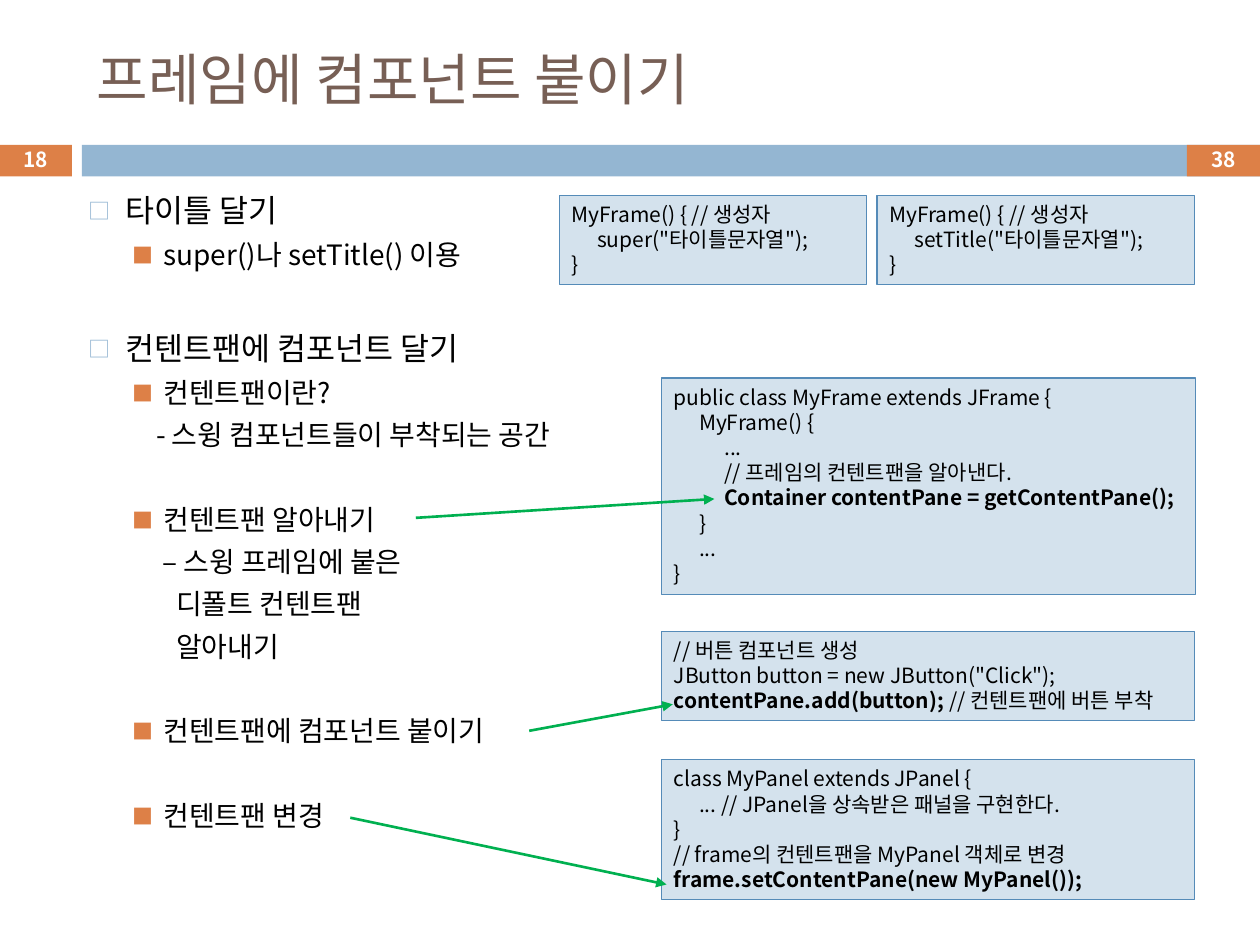
from lxml.etree import SubElement
from pptx import Presentation
from pptx.dml.color import RGBColor
from pptx.enum.shapes import MSO_CONNECTOR, MSO_SHAPE
from pptx.enum.text import MSO_ANCHOR, PP_ALIGN
from pptx.oxml.ns import qn
from pptx.util import Inches, Pt

ORANGE, BLUE, BROWN = "DD8047", "94B6D2", "775F55"
CODE_FILL, CODE_LINE, GREEN = "D4E2ED", "558BB8", "00B050"
BLACK, WHITE = "000000", "FFFFFF"


def color(value):
    return RGBColor.from_string(value)


class SlideBuilder:
    """Hold the style and the current slide, and draw each kind of element."""

    font = "Noto Sans CJK KR"
    code_size = 12
    code_indent = 0.2

    def __init__(self, slide):
        self.slide = slide

    def run(self, paragraph, text, size, ink=BLACK, bold=False):
        run = paragraph.add_run()
        run.text = text
        run.font.size = Pt(size)
        run.font.bold = bold
        run.font.color.rgb = color(ink)
        run.font.name = self.font
        SubElement(run.font._element, qn("a:ea"), typeface=self.font)

    def indent(self, paragraph, left, first=0):
        properties = paragraph._p.get_or_add_pPr()
        properties.set("marL", str(Inches(left)))
        properties.set("indent", str(Inches(first)))
        return properties

    def bullet(self, paragraph, symbol, ink, percent, left, first):
        properties = self.indent(paragraph, left, first)
        bullet_color = SubElement(properties, qn("a:buClr"))
        SubElement(bullet_color, qn("a:srgbClr"), val=ink)
        SubElement(properties, qn("a:buSzPct"), val=str(percent * 1000))
        SubElement(properties, qn("a:buFont"), typeface=self.font)
        SubElement(properties, qn("a:buChar"), char=symbol)

    def rectangle(self, box, fill, line=None):
        shape = self.slide.shapes.add_shape(
            MSO_SHAPE.RECTANGLE, *(Inches(length) for length in box))
        shape.shadow.inherit = False
        shape.fill.solid()
        shape.fill.fore_color.rgb = color(fill)
        if line:
            shape.line.color.rgb = color(line)
            shape.line.width = Pt(0.75)
        else:
            shape.line.fill.background()
        return shape

    def text_frame(self, box, anchor=MSO_ANCHOR.TOP):
        frame = self.slide.shapes.add_textbox(
            *(Inches(length) for length in box)).text_frame
        frame.word_wrap = True
        frame.vertical_anchor = anchor
        return frame

    def label(self, box, text, size, ink, bold=False, align=PP_ALIGN.LEFT):
        paragraph = self.text_frame(box, MSO_ANCHOR.MIDDLE).paragraphs[0]
        paragraph.alignment = align
        self.run(paragraph, text, size, ink, bold)

    def outline(self, box, items):
        frame = self.text_frame(box)
        for number, (kind, text, before) in enumerate(items):
            paragraph = frame.paragraphs[0] if number == 0 else frame.add_paragraph()
            paragraph.space_before = Pt(before)
            if kind == "topic":
                self.bullet(paragraph, "□", BLUE, 70, 0.7, -0.3)
            elif kind == "point":
                self.bullet(paragraph, "■", ORANGE, 75, 1, -0.25)
            else:
                self.indent(paragraph, kind)
            self.run(paragraph, text, 18 if kind == "topic" else 16)

    def code(self, box, lines):
        shape = self.rectangle(box, CODE_FILL, CODE_LINE)
        frame = shape.text_frame
        frame.word_wrap = True
        frame.vertical_anchor = MSO_ANCHOR.TOP
        for number, (depth, *parts) in enumerate(lines):
            paragraph = frame.paragraphs[0] if number == 0 else frame.add_paragraph()
            paragraph.alignment = PP_ALIGN.LEFT
            self.indent(paragraph, depth * self.code_indent)
            for part in parts:
                text, bold = part if isinstance(part, tuple) else (part, False)
                self.run(paragraph, text, self.code_size, bold=bold)

    def arrow(self, *ends):
        connector = self.slide.shapes.add_connector(
            MSO_CONNECTOR.STRAIGHT, *(Inches(length) for length in ends))
        connector.line.color.rgb = color(GREEN)
        connector.line.width = Pt(1.5)
        SubElement(connector.line._get_or_add_ln(), qn("a:tailEnd"), type="triangle")
        SubElement(connector._element.spPr, qn("a:effectLst"))


def main():
    presentation = Presentation()
    presentation.slide_width, presentation.slide_height = Inches(10), Inches(7.5)
    builder = SlideBuilder(presentation.slides.add_slide(presentation.slide_layouts[6]))

    builder.rectangle((0.65, 1.15, 9.35, 0.25), BLUE)
    for left, page in ((-0.01, "18"), (9.42, "38")):
        builder.rectangle((left, 1.15, 0.58, 0.25), ORANGE)
        builder.label((left, 1.13, 0.58, 0.27), page, 11.9, WHITE, True, PP_ALIGN.CENTER)
    builder.label((0.67, 0.25, 8.92, 0.74), "프레임에 컴포넌트 붙이기", 32, BROWN)

    builder.outline((0.2, 1.47, 8.92, 5.51), [
        ("topic", "타이틀 달기", 5.5),
        ("point", "super()나 setTitle() 이용", 5),
        ("topic", "컨텐트팬에 컴포넌트 달기", 32.6),
        ("point", "컨텐트팬이란?", 5),
        (0.94, "- 스윙 컴포넌트들이 부착되는 공간", 5),
        ("point", "컨텐트팬 알아내기", 29.2),
        (0.99, "– 스윙 프레임에 붙은", 5),
        (1.1, "디폴트 컨텐트팬", 5),
        (1.1, "알아내기", 5),
        ("point", "컨텐트팬에 컴포넌트 붙이기", 29.2),
        ("point", "컨텐트팬 변경", 29.2),
    ])

    builder.code((5.25, 3, 4.24, 1.72), [
        (0, "public class MyFrame extends JFrame {"),
        (1, "MyFrame() {"),
        (2, "..."),
        (2, "// 프레임의 컨텐트팬을 알아낸다."),
        (2, ("Container contentPane = getContentPane();", True)),
        (1, "}"),
        (1, "..."),
        (0, "}"),
    ])
    builder.code((5.25, 6.03, 4.23, 1.11), [
        (0, "class MyPanel extends JPanel {"),
        (1, "... // JPanel을 상속받은 패널을 구현한다."),
        (0, "}"),
        (0, "// frame의 컨텐트팬을 MyPanel 객체로 변경"),
        (0, ("frame.setContentPane(new MyPanel());", True)),
    ])
    builder.code((5.25, 5.01, 4.23, 0.71), [
        (0, "// 버튼 컴포넌트 생성"),
        (0, 'JButton button = new JButton("Click");'),
        (0, ("contentPane.add(button); ", True), "// 컨텐트팬에 버튼 부착"),
    ])
    for left, width, call in ((4.44, 2.44, "super"), (6.96, 2.52, "setTitle")):
        builder.code((left, 1.55, width, 0.71), [
            (0, "MyFrame() { // 생성자"),
            (1, f'{call}("타이틀문자열");'),
            (0, "}"),
        ])

    builder.arrow(3.3, 4.11, 5.67, 3.96)
    builder.arrow(4.2, 5.8, 5.34, 5.59)
    builder.arrow(2.78, 6.49, 5.29, 7.02)
    presentation.save("out.pptx")


if __name__ == "__main__":
    main()
